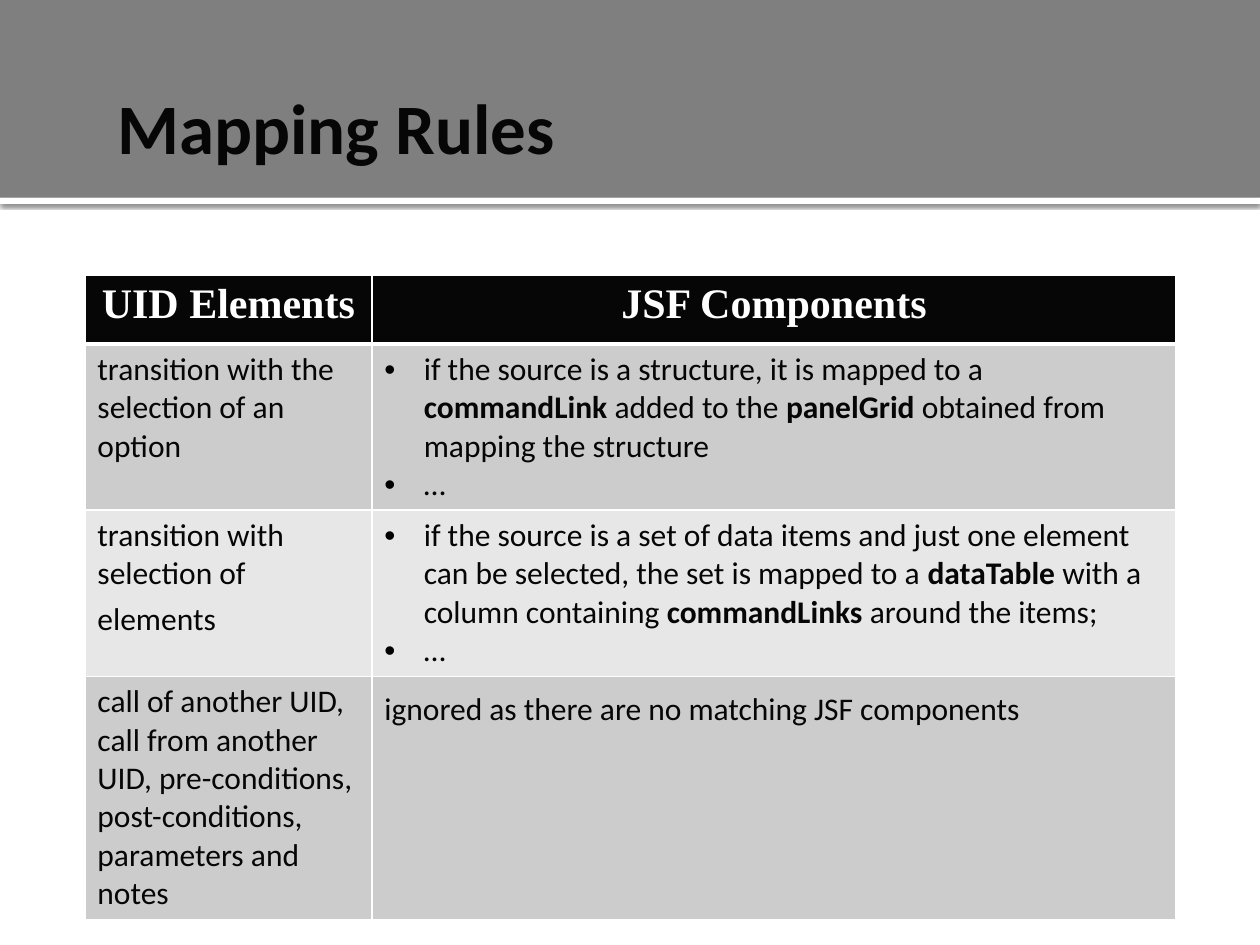
from lxml import etree
from pptx import Presentation
from pptx.dml.color import RGBColor
from pptx.enum.shapes import MSO_SHAPE
from pptx.enum.text import MSO_ANCHOR, PP_ALIGN
from pptx.oxml import parse_xml
from pptx.util import Pt

RECTANGLE = MSO_SHAPE.RECTANGLE
MIDDLE = MSO_ANCHOR.MIDDLE
CENTER = PP_ALIGN.CENTER
NS = "http://schemas.openxmlformats.org/drawingml/2006/main"
COLORS = {"ink": "060606", "white": "FFFFFF", "band": "7F7F7F",
          "dark_row": "CCCCCC", "light_row": "E7E7E7", "black": "000000"}
BODY_FONT = "Calibri"
HEADER_FONT = "Times New Roman"
BULLET_INDENT = 22.5


def add_span(para, text, size=18, font=BODY_FONT, color="ink", bold=False):
    span = para.add_run()
    span.text = text
    span.font.size = Pt(size)
    span.font.name = font
    span.font.bold = bold
    span.font.color.rgb = RGBColor.from_string(COLORS[color])


def style_cell(cell, fill, bottom_width):
    """Give the cell a solid fill and white borders."""
    cell.fill.solid()
    cell.fill.fore_color.rgb = RGBColor.from_string(COLORS[fill])
    properties = cell._tc.get_or_add_tcPr()
    widths = {"lnL": 1, "lnR": 1, "lnT": 1, "lnB": bottom_width}
    for position, (side, width) in enumerate(widths.items()):
        properties.insert(position, parse_xml(
            f'<a:{side} xmlns:a="{NS}" w="{Pt(width)}"><a:solidFill>'
            f'<a:srgbClr val="{COLORS["white"]}"/></a:solidFill></a:{side}>'))


deck = Presentation()
deck.slide_width, deck.slide_height = Pt(720), Pt(540)
slide = deck.slides.add_slide(deck.slide_layouts[6])

# Title band, with a white stripe that casts a shadow below it
for top, height, color in [(113, 3.6, "white"), (0, 113, "band")]:
    bar = slide.shapes.add_shape(RECTANGLE, Pt(0), Pt(top), Pt(720), Pt(height))
    bar.shadow.inherit = False
    bar.fill.solid()
    bar.fill.fore_color.rgb = RGBColor.from_string(COLORS[color])
    bar.line.fill.background()
    if color == "white":
        effects = bar._element.spPr.find(f"{{{NS}}}effectLst")
        effects.append(parse_xml(
            f'<a:outerShdw xmlns:a="{NS}" blurRad="{Pt(2.5)}" dist="{Pt(0.8)}" '
            f'dir="5400000"><a:srgbClr val="{COLORS["black"]}">'
            '<a:alpha val="60000"/></a:srgbClr></a:outerShdw>'))

title = slide.shapes.add_textbox(Pt(60), Pt(42), Pt(636), Pt(60)).text_frame
title.word_wrap = True
title.vertical_anchor = MIDDLE
title.margin_left = Pt(7.2)
title.margin_right = title.margin_top = title.margin_bottom = Pt(3.6)
add_span(title.paragraphs[0], "Mapping Rules", size=40.5, bold=True)

# Each rule: element, component paragraphs of (text, bold) spans, bulleted or not
RULES = [
    ("transition with the selection of an option",
     [[("if the source is a structure, it is mapped to a ", False),
       ("commandLink", True), (" added to the ", False), ("panelGrid", True),
       (" obtained from mapping the structure", False)],
      [("…", False)]], True),
    ("transition with selection of elements",
     [[("if the source is a set of data items and just one element can be "
        "selected, the set is mapped to a ", False),
       ("dataTable", True), (" with a column containing ", False),
       ("commandLinks", True), (" around the items;", False)],
      [("…", False)]], True),
    ("call of another UID, call from another UID, pre-conditions, "
     "post-conditions, parameters and notes",
     [[("ignored as there are no matching JSF components", False)]], False),
]
# Paragraphs that end in a larger space, which makes their last line taller
TALL_ENDINGS = ("selection of elements", "JSF components")
COLUMN_WIDTHS = [164, 459.5]
ROW_HEIGHTS = [39.5, 95, 95, 139]

table_frame = slide.shapes.add_table(
    len(ROW_HEIGHTS), len(COLUMN_WIDTHS), Pt(48.5), Pt(157),
    Pt(sum(COLUMN_WIDTHS)), Pt(sum(ROW_HEIGHTS)))
table = table_frame.table
for column, width in zip(table.columns, COLUMN_WIDTHS):
    column.width = Pt(width)
for row, height in zip(table.rows, ROW_HEIGHTS):
    row.height = Pt(height)

for column_index, heading in enumerate(["UID Elements", "JSF Components"]):
    cell = table.cell(0, column_index)
    style_cell(cell, "ink", 3)
    para = cell.text_frame.paragraphs[0]
    para.alignment = CENTER
    add_span(para, heading, size=24, font=HEADER_FONT, color="white", bold=True)

for row_index, (element, components, bulleted) in enumerate(RULES, start=1):
    fill = "dark_row" if row_index % 2 else "light_row"
    for column_index, paragraphs in enumerate([[[(element, False)]], components]):
        cell = table.cell(row_index, column_index)
        style_cell(cell, fill, 1)
        frame = cell.text_frame
        for para_index, spans in enumerate(paragraphs):
            para = frame.add_paragraph() if para_index else frame.paragraphs[0]
            if column_index == 1 and bulleted:
                properties = para._p.get_or_add_pPr()
                properties.set("marL", str(Pt(BULLET_INDENT)))
                properties.set("indent", str(-Pt(BULLET_INDENT)))
                bullet_color = etree.SubElement(properties, f"{{{NS}}}buClr")
                etree.SubElement(bullet_color, f"{{{NS}}}srgbClr", val=COLORS["black"])
                etree.SubElement(properties, f"{{{NS}}}buFont", typeface="Arial")
                etree.SubElement(properties, f"{{{NS}}}buChar", char="•")
            for text, bold in spans:
                add_span(para, text, bold=bold)
            if para.text.endswith(TALL_ENDINGS):
                add_span(para, " ", size=24, font=HEADER_FONT)

deck.save("out.pptx")
